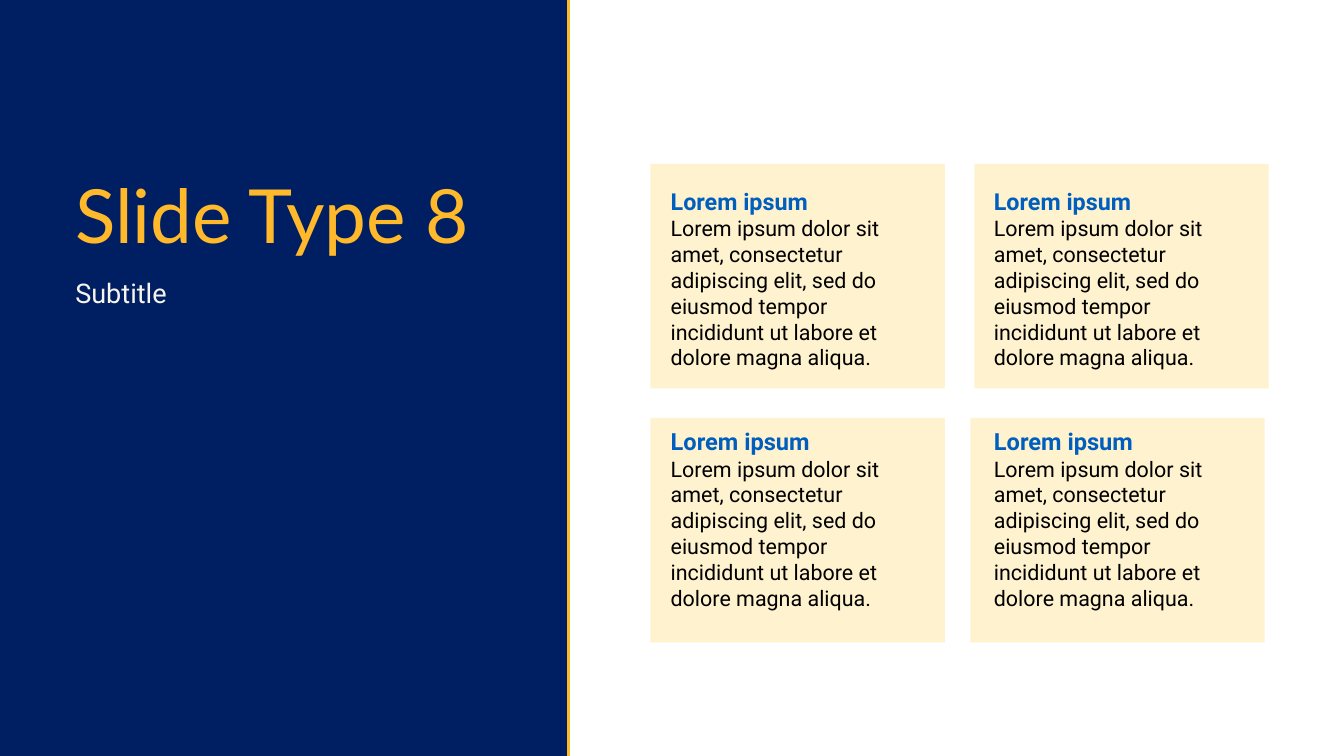
from lxml.etree import SubElement
from pptx import Presentation
from pptx.dml.color import RGBColor
from pptx.enum.shapes import MSO_CONNECTOR, MSO_SHAPE
from pptx.enum.text import MSO_ANCHOR
from pptx.oxml.ns import qn
from pptx.util import Emu, Pt

PX = 9144  # 100 px to the inch
WIDTH, HEIGHT = 2000, 1125

COLOURS = {
    "navy": "001F63",
    "gold": "FFB92A",
    "ivory": "F8F4EB",
    "cream": "FFF2CE",
    "blue": "005FBE",
    "black": "000000",
}

# Font settings, line spacing in points, colour
TITLE = {"font": {"name": "Lato", "size": Pt(80)}, "spacing": 88, "colour": "gold"}
SUBTITLE = {"font": {"name": "Roboto", "size": Pt(29)}, "spacing": 34.8, "colour": "ivory"}
BODY = {"font": {"name": "Roboto", "size": Pt(23), "bold": False},
        "spacing": 27.6, "colour": "black"}


def heading(size, spacing):
    return {"font": {"name": "Roboto", "size": Pt(size), "bold": True},
            "spacing": spacing, "colour": "blue"}


HEADING = "Lorem ipsum"
COPY = ("Lorem ipsum dolor sit amet, consectetur adipiscing elit, sed do eiusmod "
        "tempor incididunt ut labore et dolore magna aliqua.")


class Canvas:
    def __init__(self, slide):
        self.slide = slide

    def px(self, *lengths):
        return [Emu(length * PX) for length in lengths]

    def colour(self, name):
        return RGBColor.from_string(COLOURS[name])

    def panel(self, left, top, width, height, fill):
        panel = self.slide.shapes.add_shape(
            MSO_SHAPE.RECTANGLE, *self.px(left, top, width, height))
        panel.shadow.inherit = False
        panel.fill.solid()
        panel.fill.fore_color.rgb = self.colour(fill)
        panel.line.fill.background()

    def rule(self, x1, y1, x2, y2, colour, weight):
        rule = self.slide.shapes.add_connector(
            MSO_CONNECTOR.STRAIGHT, *self.px(x1, y1, x2, y2))
        rule.line.color.rgb = self.colour(colour)
        rule.line.width = Pt(weight)
        SubElement(rule._element.spPr, qn("a:effectLst"))

    def text(self, left, top, width, height, *paragraphs):
        frame = self.slide.shapes.add_textbox(
            *self.px(left, top, width, height)).text_frame
        frame_format = {"word_wrap": True, "vertical_anchor": MSO_ANCHOR.TOP,
                        "margin_left": 0, "margin_top": 0,
                        "margin_right": 0, "margin_bottom": 0}
        for name, value in frame_format.items():
            setattr(frame, name, value)
        for index, (wording, style) in enumerate(paragraphs):
            paragraph = frame.add_paragraph() if index else frame.paragraphs[0]
            paragraph.line_spacing = Pt(style["spacing"])
            run = paragraph.add_run()
            run.text = wording
            for name, value in style["font"].items():
                setattr(run.font, name, value)
            run.font.color.rgb = self.colour(style["colour"])


def main():
    deck = Presentation()
    deck.slide_width, deck.slide_height = Emu(WIDTH * PX), Emu(HEIGHT * PX)
    canvas = Canvas(deck.slides.add_slide(deck.slide_layouts[6]))

    # Title side
    canvas.panel(0, 0, 848, HEIGHT, "navy")
    canvas.rule(846, 0, 846, HEIGHT, "gold", 2.25)
    canvas.text(112, 262, 612, 143, ("Slide Type 8", TITLE))
    canvas.text(112, 412, 612, 47, ("Subtitle", SUBTITLE))

    # Two rows of two cards; the lower right card sits slightly further left
    rows = [
        {"top": 244, "text_top": 279, "lefts": (968, 1450), "heading": heading(25, 30)},
        {"top": 622, "text_top": 636, "lefts": (968, 1444), "heading": heading(25.3, 30.4)},
    ]
    for row in rows:
        for card_left, text_left in zip(row["lefts"], (998, 1479)):
            canvas.panel(card_left, row["top"], 438, 334, "cream")
            canvas.text(text_left, row["text_top"], 369, 266,
                        (HEADING, row["heading"]), (COPY, BODY))

    deck.save("out.pptx")


if __name__ == "__main__":
    main()
